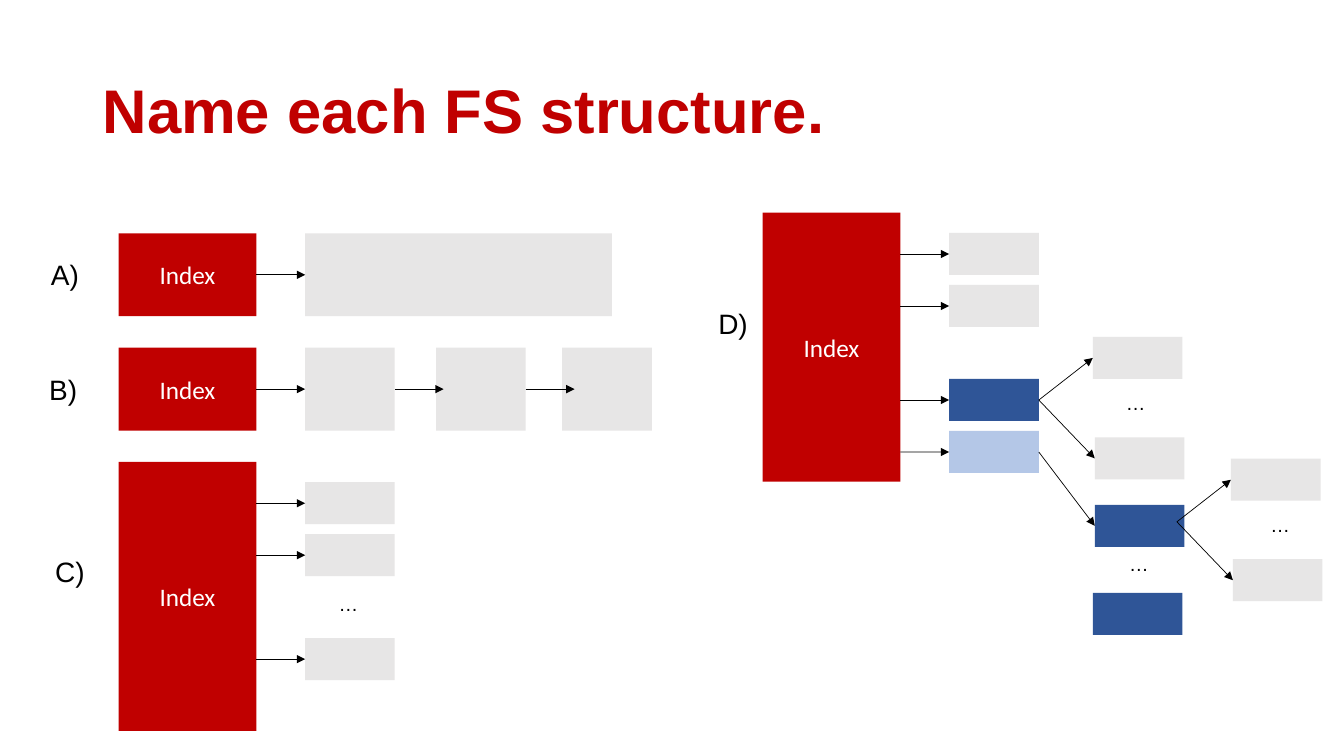
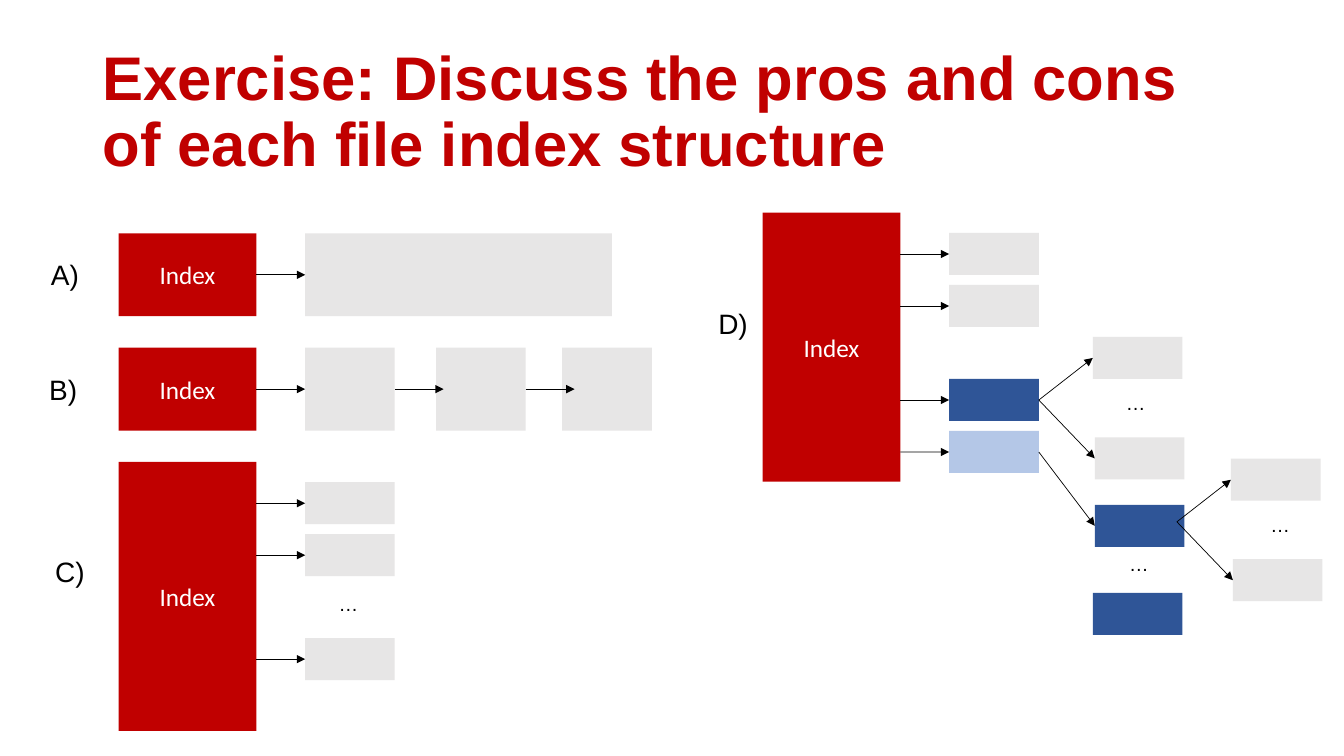
from dataclasses import dataclass

from lxml.etree import SubElement
from pptx import Presentation
from pptx.dml.color import RGBColor as RGB
from pptx.enum.shapes import MSO_CONNECTOR as Connector, MSO_SHAPE as Shape
from pptx.enum.text import MSO_ANCHOR as Anchor, MSO_AUTO_SIZE as AutoSize, PP_ALIGN as Align
from pptx.oxml.ns import qn
from pptx.util import Cm, Pt


@dataclass(frozen=True)
class Theme:
    red: RGB = RGB(0xC0, 0x00, 0x00)
    grey: RGB = RGB(0xE7, 0xE6, 0xE6)
    blue: RGB = RGB(0x2F, 0x55, 0x97)
    pale_blue: RGB = RGB(0xB4, 0xC7, 0xE7)
    black: RGB = RGB(0x00, 0x00, 0x00)
    white: RGB = RGB(0xFF, 0xFF, 0xFF)
    text_font: str = "Arial"
    index_font: str = "Calibri"
    title_size: int = 44
    label_size: int = 20
    index_size: int = 18
    ellipsis_size: int = 14
    line_width: float = 0.5


THEME = Theme()

# Shared sizes, in centimetres
INDEX_W, INDEX_H, TALL_H = 3.47, 2.09, 6.78
BLOCK_W, BLOCK_H = 2.26, 1.06
ARROW = 1.23
BLOCK_DX = INDEX_W + ARROW     # from an index's left side to its first blocks
FIRST_DY, BLOCK_STEP = 0.51, 1.31
TITLES = (
    "Name each FS structure.",
    "Exercise: Discuss the pros and cons of each file index structure",
)


# Basic parts
def style_text(frame, size, colour, font=THEME.text_font, bold=False, align=Align.CENTER):
    for paragraph in frame.paragraphs:
        paragraph.alignment = align
        for run in paragraph.runs:
            run.font.size = Pt(size)
            run.font.name = font
            run.font.bold = bold
            run.font.color.rgb = colour


def add_block(slide, x, y, w=BLOCK_W, h=BLOCK_H, colour=THEME.grey):
    block = slide.shapes.add_shape(Shape.RECTANGLE, Cm(x), Cm(y), Cm(w), Cm(h))
    block.shadow.inherit = False
    block.fill.solid()
    block.fill.fore_color.rgb = colour
    block.line.fill.background()
    return block


def add_index(slide, x, y, h=INDEX_H):
    index = add_block(slide, x, y, INDEX_W, h, THEME.red)
    index.text_frame.text = "Index"
    index.text_frame.vertical_anchor = Anchor.MIDDLE
    style_text(index.text_frame, THEME.index_size, THEME.white, THEME.index_font)
    return index


def add_caption(slide, text, x, y, w, h, size):
    frame = slide.shapes.add_textbox(Cm(x), Cm(y), Cm(w), Cm(h)).text_frame
    frame.word_wrap = True
    frame.auto_size = AutoSize.SHAPE_TO_FIT_TEXT
    frame.margin_left = frame.margin_right = 0
    frame.text = text
    style_text(frame, size, THEME.black)


def add_label(slide, text, x, y):
    add_caption(slide, text, x, y, 1.37, 1.12, THEME.label_size)


def add_ellipsis(slide, x, y):
    add_caption(slide, "…", x, y, 2.18, 0.86, THEME.ellipsis_size)


def add_arrow(slide, start, end):
    """Each end is an (x, y) point, or a block to join at its facing side."""
    ends = [(Cm(0), Cm(0)) if hasattr(e, "fill") else (Cm(e[0]), Cm(e[1]))
            for e in (start, end)]
    arrow = slide.shapes.add_connector(Connector.STRAIGHT, *ends[0], *ends[1])
    if hasattr(start, "fill"):
        arrow.begin_connect(start, 3)
    if hasattr(end, "fill"):
        arrow.end_connect(end, 1)
    arrow.line.color.rgb = THEME.black
    arrow.line.width = Pt(THEME.line_width)
    SubElement(arrow.line._get_or_add_ln(), qn("a:tailEnd"), type="triangle")
    SubElement(arrow._element.spPr, qn("a:effectLst"))


def add_pointed_block(slide, x, y, dy, colour=THEME.grey):
    """A block beside a tall index at (x, y), with the arrow leading to it."""
    block = add_block(slide, x + BLOCK_DX, y + dy, colour=colour)
    add_arrow(slide, (x + INDEX_W, y + dy + BLOCK_H / 2), block)
    return block


# One function for each lettered figure, placed from its index's top left corner
def add_figure_a(slide, x, y):
    add_label(slide, "A)", x - 2.04, y + 0.48)
    index = add_index(slide, x, y)
    add_arrow(slide, index, add_block(slide, x + BLOCK_DX, y, 7.73, INDEX_H))


def add_figure_b(slide, x, y):
    add_label(slide, "B)", x - 2.08, y + 0.49)
    index = add_index(slide, x, y)
    offsets = (BLOCK_DX, 8, 11.18)
    blocks = [add_block(slide, x + dx, y, h=INDEX_H) for dx in offsets]
    add_arrow(slide, index, blocks[0])
    for block, dx in zip(blocks[:-1], offsets):
        add_arrow(slide, block, (x + dx + BLOCK_W + ARROW, y + INDEX_H / 2))


def add_figure_c(slide, x, y):
    add_label(slide, "C)", x - 1.91, y + 2.21)
    add_index(slide, x, y, TALL_H)
    for row in (0, 1, 3):
        add_pointed_block(slide, x, y, FIRST_DY + row * BLOCK_STEP)
    add_ellipsis(slide, x + BLOCK_DX, y + 3.15)


def add_fork(slide, x, y, start, ellipsis_dx):
    """Two grey blocks to the right of a blue one at (x, y)."""
    for dx, dy in ((3.62, -1.06), (3.67, 1.47)):
        add_arrow(slide, start, add_block(slide, x + dx, y + dy))
    add_ellipsis(slide, x + ellipsis_dx, y + 0.17)


def add_figure_d(slide, x, y):
    add_label(slide, "D)", x - 1.43, y + 2.24)
    add_index(slide, x, y, TALL_H)
    for row in range(2):
        add_pointed_block(slide, x, y, FIRST_DY + row * BLOCK_STEP)

    # Blue block and its fork
    blue_dy = 4.19
    blue_block = add_pointed_block(slide, x, y, blue_dy, THEME.blue)
    add_fork(slide, x + BLOCK_DX, y + blue_dy, blue_block, 3.61)

    # Pale block, the blue blocks to its right, and the fork of the upper one
    pale_dy = blue_dy + BLOCK_STEP
    pale_block = add_pointed_block(slide, x, y, pale_dy, THEME.pale_blue)
    left, top = x + BLOCK_DX, y + pale_dy
    upper_blue = add_block(slide, left + 3.67, top + 1.86, colour=THEME.blue)
    add_block(slide, left + 3.62, top + 4.08, colour=THEME.blue)
    add_ellipsis(slide, left + 3.69, top + 2.92)
    add_arrow(slide, pale_block, upper_blue)
    fork_x, fork_y = left + 3.48, top + 1.76
    add_fork(slide, fork_x, fork_y, (fork_x + BLOCK_W, fork_y + BLOCK_H / 2), 3.77)


# Slide
def add_title(slide, text):
    title = slide.shapes.title
    title.left, title.top, title.width, title.height = Cm(2.33), Cm(1.02), Cm(29.21), Cm(3.68)
    frame = title.text_frame
    frame.text = text
    frame.word_wrap = True
    frame.auto_size = AutoSize.NONE
    frame.vertical_anchor = Anchor.MIDDLE
    frame.paragraphs[0].line_spacing = 0.9
    style_text(frame, THEME.title_size, THEME.red, bold=True, align=Align.LEFT)


def add_figures_slide(deck, title):
    slide = deck.slides.add_slide(deck.slide_layouts.get_by_name("Title Only"))
    add_title(slide, title)
    left, top, pitch = 2.99, 5.88, 2.88
    for row, add_figure in enumerate((add_figure_a, add_figure_b, add_figure_c)):
        add_figure(slide, left, top + row * pitch)
    add_figure_d(slide, 19.22, 5.36)


def main():
    deck = Presentation()
    deck.slide_width, deck.slide_height = Cm(33.87), Cm(19.05)
    for title in TITLES:
        add_figures_slide(deck, title)
    deck.save("out.pptx")


if __name__ == "__main__":
    main()
